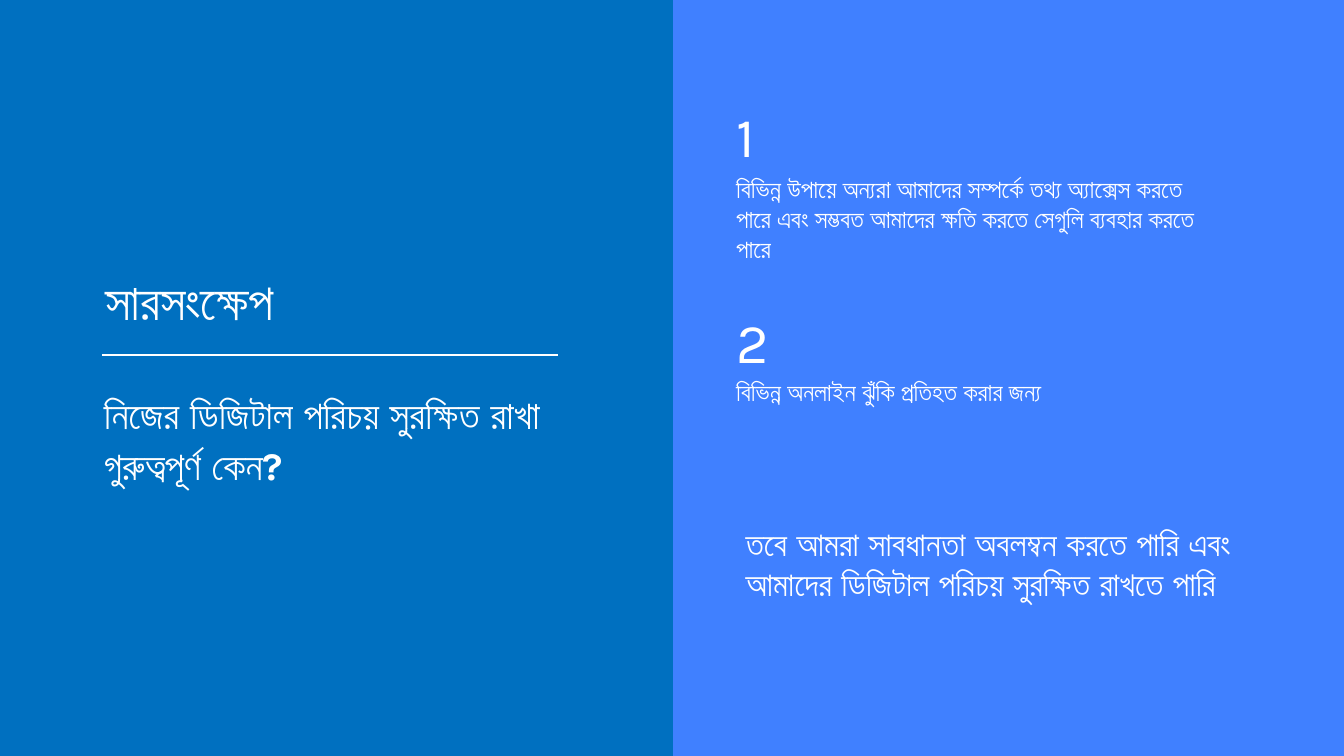
from lxml import etree
from pptx import Presentation
from pptx.dml.color import RGBColor
from pptx.enum.shapes import MSO_CONNECTOR, MSO_SHAPE
from pptx.enum.text import MSO_ANCHOR, MSO_AUTO_SIZE, PP_ALIGN
from pptx.oxml.ns import qn
from pptx.util import Emu, Pt

PX = 9525
WIDTH, HEIGHT, SPLIT = 1280, 720, 641
FONT = "Karla"
WHITE = RGBColor(0xFF, 0xFF, 0xFF)
DEEP_BLUE = RGBColor(0x00, 0x70, 0xC0)
BRIGHT_BLUE = RGBColor(0x40, 0x80, 0xFF)

# Each point: number, text, box, and the distance from number to text
POINTS = [
    ("1", "বিভিন্ন উপায়ে অন্যরা আমাদের সম্পর্কে তথ্য অ্যাক্সেস করতে পারে এবং সম্ভবত "
          "আমাদের ক্ষতি করতে সেগুলি ব্যবহার করতে পারে", (50, 92, 462, 224), 68),
    ("2", "বিভিন্ন অনলাইন ঝুঁকি প্রতিহত করার জন্য", (50, 288, 412, 133), 65),
]


def px(*lengths):
    return [Emu(length * PX) for length in lengths]


def write(shape, text, size, bold=False, inset=(10, 5), spacing=1.0):
    frame = shape.text_frame
    frame.word_wrap = True
    frame.auto_size = MSO_AUTO_SIZE.SHAPE_TO_FIT_TEXT
    frame.vertical_anchor = MSO_ANCHOR.TOP
    frame.margin_left = frame.margin_right = Emu(inset[0] * PX)
    frame.margin_top = frame.margin_bottom = Emu(inset[1] * PX)
    frame.text = text
    para = frame.paragraphs[0]
    para.alignment = PP_ALIGN.LEFT
    para.line_spacing = spacing
    para.font.name = FONT
    para.font.size = Pt(size)
    para.font.bold = bold
    para.font.color.rgb = WHITE


def add_text(slide, box, text, size, **style):
    write(slide.shapes.add_textbox(*px(*box)), text, size, **style)


def add_panel(slide, box, color):
    panel = slide.shapes.add_shape(MSO_SHAPE.RECTANGLE, *px(*box))
    panel.shadow.inherit = False
    panel.fill.solid()
    panel.fill.fore_color.rgb = color
    panel.line.fill.background()


def add_rule(slide, left, top, width):
    rule = slide.shapes.add_connector(
        MSO_CONNECTOR.STRAIGHT, *px(left, top, left + width, top))
    rule.line.color.rgb = WHITE
    rule.line.width = Pt(1)
    etree.SubElement(rule._element.spPr, qn("a:effectLst"))


def add_summary(slide, box):
    """Left half: the slide title, a rule and the question."""
    left, top, _, _ = box
    add_panel(slide, box, DEEP_BLUE)
    title = slide.shapes.title
    slide.shapes._spTree.append(title._element)  # bring in front of the panel
    title.left, title.top, title.width, title.height = px(left + 90, top + 252, 340, 68)
    write(title, "সারসংক্ষেপ", 36, bold=True)
    add_rule(slide, left + 97, top + 338, 434)
    add_text(slide, (left + 97, top + 367, 456, 126),
             "নিজের ডিজিটাল পরিচয় সুরক্ষিত রাখা গুরুত্বপূর্ণ কেন?",
             28, bold=True, inset=(2, 2), spacing=1.07)


def add_point(slide, box, number, text, text_offset):
    left, top, width, height = box
    add_text(slide, (left, top + text_offset, width, height - text_offset), text, 18)
    add_text(slide, (left, top, 98, 74), number, 40)


def add_answers(slide, box):
    """Right half: the numbered points and the closing statement."""
    left, top, _, _ = box
    add_panel(slide, box, BRIGHT_BLUE)
    for number, text, (x, y, width, height), text_offset in POINTS:
        add_point(slide, (left + x, top + y, width, height), number, text, text_offset)
    add_text(slide, (left + 59, top + 493, 526, 165),
             "তবে আমরা সাবধানতা অবলম্বন করতে পারি এবং আমাদের ডিজিটাল পরিচয় "
             "সুরক্ষিত রাখতে পারি", 24, bold=True)


def main():
    deck = Presentation()
    deck.slide_width, deck.slide_height = px(WIDTH, HEIGHT)
    slide = deck.slides.add_slide(deck.slide_layouts[5])
    add_summary(slide, (0, 0, SPLIT, HEIGHT))
    add_answers(slide, (SPLIT, 0, WIDTH - SPLIT, HEIGHT))
    deck.save("out.pptx")


if __name__ == "__main__":
    main()
